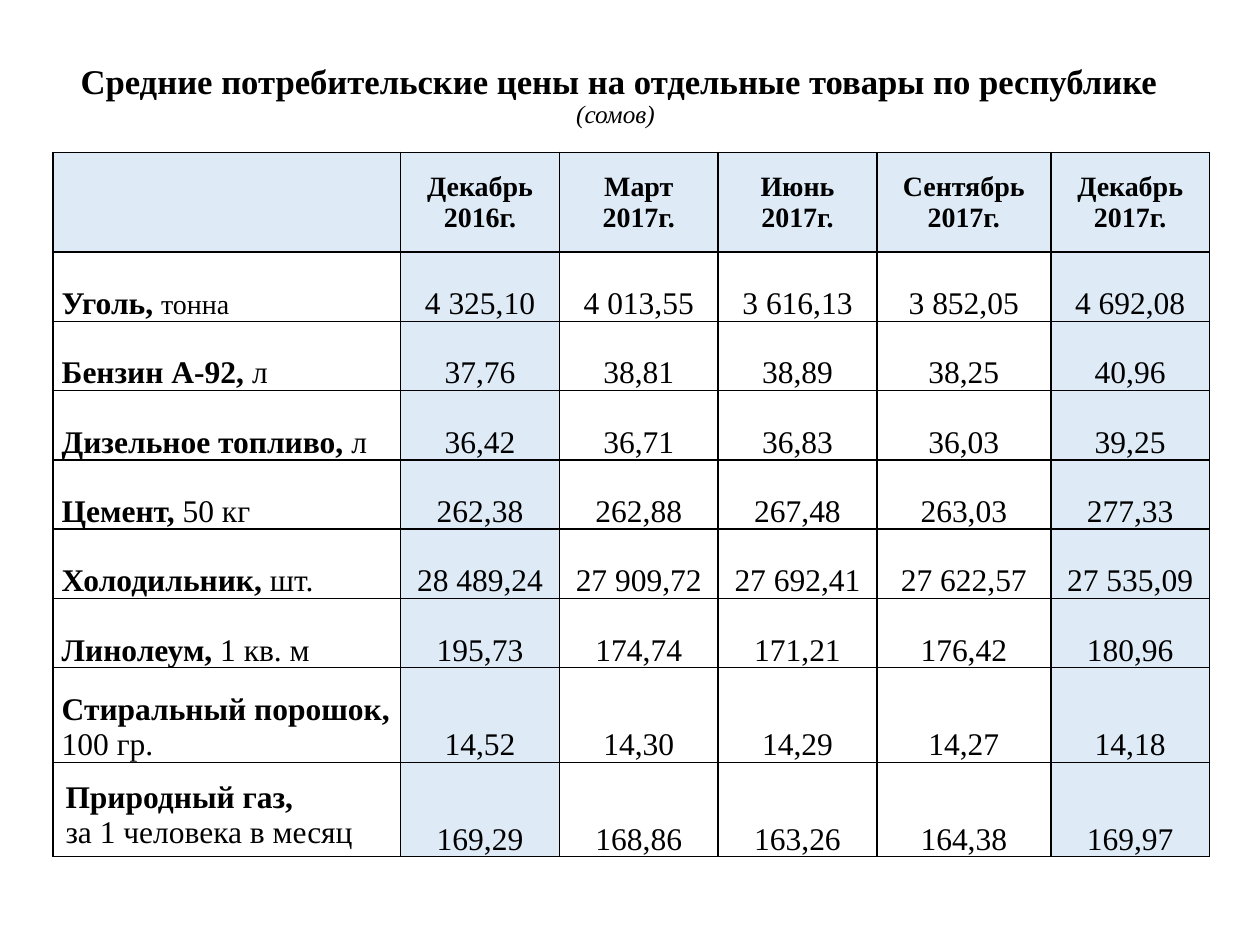
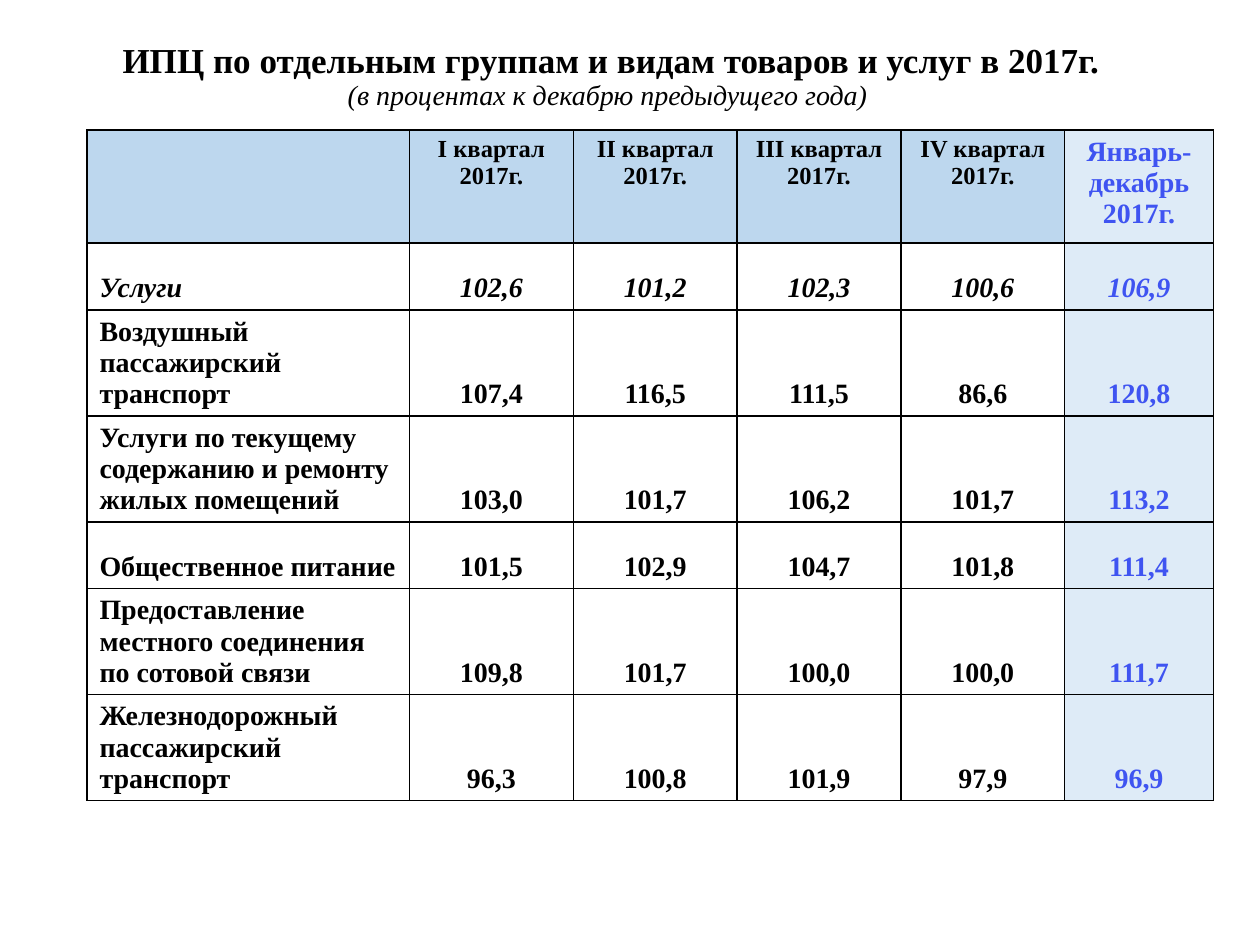
from dataclasses import dataclass

import pptx
import pptx.dml.color
import pptx.enum.text
import pptx.oxml
import pptx.oxml.ns
import pptx.util
from pptx.util import Inches

ANCHOR = pptx.enum.text.MSO_ANCHOR
ALIGN = pptx.enum.text.PP_ALIGN


@dataclass(frozen=True)
class Theme:
    font: str = "Times New Roman"
    ink: str = "000000"
    accent: str = "3F54F1"
    pale: str = "DEEBF7"
    blue: str = "BDD7EE"
    border_width: float = 1
    title_spacing: float = 0.9
    price_title: float = 19.8
    price_subtitle: float = 14.4
    index_title: float = 20
    header: float = 16
    quarter: float = 14
    price: float = 18
    unit_small: float = 16
    index: float = 16


@dataclass(frozen=True)
class Span:
    text: str
    size: float
    bold: bool = False
    italic: bool = False
    color: str = Theme.ink


class Deck:
    def __init__(self, theme):
        self.theme = theme
        self.presentation = pptx.Presentation()
        self.presentation.slide_width = Inches(10)
        self.presentation.slide_height = Inches(7.5)
        self.slide = None

    def add_slide(self):
        title_only = self.presentation.slide_layouts[5]
        self.slide = self.presentation.slides.add_slide(title_only)

    def add_run(self, paragraph, span):
        run = paragraph.add_run()
        run.text = span.text
        font = run.font
        font.name = self.theme.font
        font.size = pptx.util.Pt(span.size)
        font.bold = span.bold
        font.italic = span.italic
        font.color.rgb = pptx.dml.color.RGBColor.from_string(span.color)

    def add_title(self, box, heading, subtitle):
        title = self.slide.shapes.title
        title.left, title.top, title.width, title.height = map(Inches, box)
        frame = title.text_frame
        frame.auto_size = pptx.enum.text.MSO_AUTO_SIZE.NONE
        frame.word_wrap = True
        frame.vertical_anchor = ANCHOR.MIDDLE
        paragraph = frame.paragraphs[0]
        paragraph.alignment = ALIGN.CENTER
        paragraph.line_spacing = self.theme.title_spacing
        self.add_run(paragraph, heading)
        paragraph.add_line_break()
        self.add_run(paragraph, subtitle)

    def add_table(self, left, top, widths, heights):
        frame = self.slide.shapes.add_table(
            len(heights), len(widths), Inches(left), Inches(top),
            Inches(sum(widths)), Inches(sum(heights)))
        table = frame.table
        table.first_row = table.horz_banding = False
        for column, width in zip(table.columns, widths):
            column.width = Inches(width)
        for row, height in zip(table.rows, heights):
            row.height = Inches(height)
        return table

    def draw_borders(self, cell):
        properties = cell._tc.get_or_add_tcPr()
        width = pptx.util.Pt(self.theme.border_width)
        for side in ("lnL", "lnR", "lnT", "lnB"):
            properties.append(pptx.oxml.parse_xml(
                f'<a:{side} {pptx.oxml.ns.nsdecls("a")} w="{width}"><a:solidFill>'
                f'<a:srgbClr val="{self.theme.ink}"/></a:solidFill></a:{side}>'))

    def fill_cell(self, cell, paragraphs, fill=None, align=ALIGN.CENTER,
                  anchor=ANCHOR.BOTTOM, insets=(0.1, 0.05), spacing=0):
        """Style a cell; paragraphs is a list of lists of spans."""
        self.draw_borders(cell)
        if fill:
            cell.fill.solid()
            cell.fill.fore_color.rgb = pptx.dml.color.RGBColor.from_string(fill)
        else:
            cell.fill.background()
        cell.vertical_anchor = anchor
        cell.margin_left = cell.margin_right = Inches(insets[0])
        cell.margin_top = cell.margin_bottom = Inches(insets[1])
        frame = cell.text_frame
        for number, spans in enumerate(paragraphs):
            paragraph = frame.add_paragraph() if number else frame.paragraphs[0]
            paragraph.alignment = align
            if spacing:
                paragraph.space_before = paragraph.space_after = pptx.util.Pt(spacing)
            for span in spans:
                self.add_run(paragraph, span)

    def save(self):
        self.presentation.save("out.pptx")


PRICE_MONTHS = ("Декабрь 2016г.", "Март 2017г.", "Июнь 2017г.",
                "Сентябрь 2017г.", "Декабрь 2017г.")
PRICES = (
    ("Уголь, ", "тонна", ("4 325,10", "4 013,55", "3 616,13", "3 852,05", "4 692,08")),
    ("Бензин А-92, ", "л", ("37,76", "38,81", "38,89", "38,25", "40,96")),
    ("Дизельное топливо, ", "л", ("36,42", "36,71", "36,83", "36,03", "39,25")),
    ("Цемент, ", "50 кг", ("262,38", "262,88", "267,48", "263,03", "277,33")),
    ("Холодильник, ", "шт.",
     ("28 489,24", "27 909,72", "27 692,41", "27 622,57", "27 535,09")),
    ("Линолеум, ", "1 кв. м", ("195,73", "174,74", "171,21", "176,42", "180,96")),
    ("Стиральный порошок, ", "100 гр.", ("14,52", "14,30", "14,29", "14,27", "14,18")),
    ("Природный газ,", "за 1 человека в месяц",
     ("169,29", "168,86", "163,26", "164,38", "169,97")),
)

INDEX_PERIODS = ("I квартал 2017г.", "II квартал 2017г.", "III квартал 2017г.",
                 "IV квартал 2017г.", "Январь-декабрь 2017г.")
INDICES = (
    ("Услуги", ("102,6", "101,2", "102,3", "100,6", "106,9")),
    ("Воздушный пассажирский транспорт", ("107,4", "116,5", "111,5", "86,6", "120,8")),
    ("Услуги по текущему содержанию и ремонту жилых помещений",
     ("103,0", "101,7", "106,2", "101,7", "113,2")),
    ("Общественное питание", ("101,5", "102,9", "104,7", "101,8", "111,4")),
    ("Предоставление местного соединения по сотовой связи",
     ("109,8", "101,7", "100,0", "100,0", "111,7")),
    ("Железнодорожный пассажирский транспорт",
     ("96,3", "100,8", "101,9", "97,9", "96,9")),
)


def build_prices(deck):
    theme = deck.theme
    deck.add_slide()
    deck.add_title(
        (0.41, 0.4, 9, 0.73),
        Span("Средние потребительские цены на отдельные товары по республике",
             theme.price_title, bold=True),
        Span("(сомов) ", theme.price_subtitle, italic=True))
    table = deck.add_table(0.42, 1.21, [2.76, 1.26, 1.26, 1.26, 1.38, 1.26],
                           [0.79] + [0.55] * 6 + [0.75] * 2)

    deck.fill_cell(table.cell(0, 0), [], theme.pale)
    for column, month in enumerate(PRICE_MONTHS, 1):
        deck.fill_cell(table.cell(0, column), [[Span(month, theme.header, bold=True)]],
                       theme.pale, anchor=ANCHOR.MIDDLE, insets=(0.07, 0), spacing=4)

    for row, (product, unit, prices) in enumerate(PRICES, 1):
        unit_size = theme.unit_small if row == 1 else theme.price
        name = Span(product, theme.price, bold=True)
        measure = Span(unit, unit_size)
        if row == len(PRICES):
            deck.fill_cell(table.cell(row, 0), [[name], [measure]], align=ALIGN.LEFT)
        else:
            deck.fill_cell(table.cell(row, 0), [[name, measure]],
                           align=ALIGN.LEFT, insets=(0.07, 0))
        for column, price in enumerate(prices, 1):
            is_december = column in (1, len(prices))
            deck.fill_cell(table.cell(row, column), [[Span(price, theme.price)]],
                           theme.pale if is_december else None, insets=(0, 0))


def build_indices(deck):
    theme = deck.theme
    deck.add_slide()
    deck.add_title(
        (0.54, 0.19, 8.62, 0.85),
        Span("ИПЦ по отдельным группам и видам товаров и услуг в 2017г.",
             theme.index_title, bold=True),
        Span("(в процентах к декабрю предыдущего года) ", theme.index, italic=True))
    single, triple = 0.53, 0.84
    table = deck.add_table(0.69, 1.03, [2.56] + [1.3] * 4 + [1.18],
                           [0.9, single, triple, triple, single, triple, triple])

    deck.fill_cell(table.cell(0, 0), [], theme.blue)
    for column, period in enumerate(INDEX_PERIODS, 1):
        if column == len(INDEX_PERIODS):
            span, fill = Span(period, theme.header, True, color=theme.accent), theme.pale
        else:
            span, fill = Span(period, theme.quarter, True), theme.blue
        deck.fill_cell(table.cell(0, column), [[span]], fill, anchor=ANCHOR.TOP)

    for row, (service, values) in enumerate(INDICES, 1):
        is_total = row == 1
        deck.fill_cell(table.cell(row, 0),
                       [[Span(service, theme.index, True, is_total)]], align=ALIGN.LEFT)
        for column, value in enumerate(values, 1):
            is_year = column == len(values)
            color = theme.accent if is_year else theme.ink
            deck.fill_cell(table.cell(row, column),
                           [[Span(value, theme.index, True, is_total, color)]],
                           theme.pale if is_year else None)


def main():
    deck = Deck(Theme())
    build_prices(deck)
    build_indices(deck)
    deck.save()


if __name__ == "__main__":
    main()
